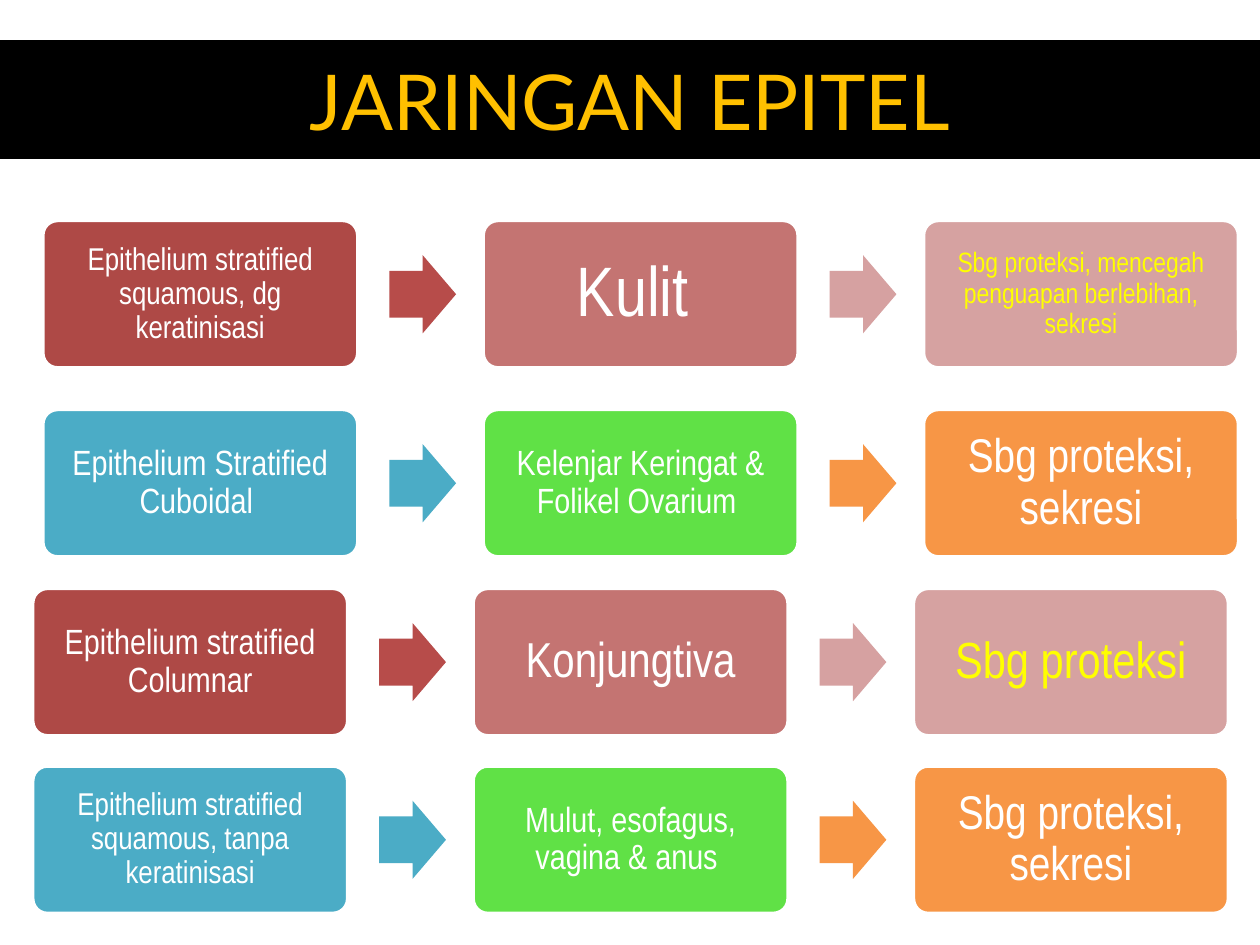
import pptx
import pptx.util
import pptx.dml.color
import pptx.enum.shapes
import pptx.enum.text

Inches = pptx.util.Inches
Pt = pptx.util.Pt
RGBColor = pptx.dml.color.RGBColor
MSO_SHAPE = pptx.enum.shapes.MSO_SHAPE

BLACK = RGBColor(0x00, 0x00, 0x00)
WHITE = RGBColor(0xFF, 0xFF, 0xFF)
GOLD = RGBColor(0xFF, 0xC0, 0x00)
YELLOW = RGBColor(0xFF, 0xFF, 0x00)
DARK_RED = RGBColor(0xAE, 0x49, 0x46)
RED = RGBColor(0xB7, 0x4C, 0x4A)
ROSE = RGBColor(0xC4, 0x74, 0x72)
PINK = RGBColor(0xD6, 0xA2, 0xA1)
PALE_PINK = RGBColor(0xD6, 0xA1, 0xA1)
TEAL = RGBColor(0x4B, 0xAC, 0xC6)
GREEN = RGBColor(0x60, 0xE1, 0x46)
ORANGE = RGBColor(0xF7, 0x96, 0x46)

BOX_W, BOX_H = 2.5, 1.17
ARROW_W, ARROW_H = 0.53, 0.62
STEP, ARROW_DX = 3.495, 2.75

RED_THEME = ((DARK_RED, ROSE, PINK), (RED, PALE_PINK), (WHITE, WHITE, YELLOW))
MIXED_THEME = ((TEAL, GREEN, ORANGE), (TEAL, ORANGE), (WHITE, WHITE, WHITE))

ROWS = [
    (0.34, 1.75, RED_THEME, [
        ("Epithelium stratified squamous, dg keratinisasi", 18),
        ("Kulit ", 40),
        ("Sbg proteksi, mencegah penguapan berlebihan, sekresi", 16)]),
    (0.34, 3.25, MIXED_THEME, [
        ("Epithelium Stratified Cuboidal ", 20),
        ("Kelenjar Keringat & Folikel Ovarium ", 20),
        ("Sbg proteksi, sekresi", 27)]),
    (0.26, 4.67, RED_THEME, [
        ("Epithelium stratified Columnar", 20),
        ("Konjungtiva", 28),
        ("Sbg proteksi", 29)]),
    (0.26, 6.08, MIXED_THEME, [
        ("Epithelium stratified squamous, tanpa keratinisasi", 18),
        ("Mulut, esofagus, vagina & anus ", 20),
        ("Sbg proteksi, sekresi", 27)]),
]


def write_text(sp, text, size, name, color, margin, spacing):
    tf = sp.text_frame
    frame = {"word_wrap": True,
             "auto_size": pptx.enum.text.MSO_AUTO_SIZE.NONE,
             "vertical_anchor": pptx.enum.text.MSO_ANCHOR.MIDDLE}
    for side in ("left", "right", "top", "bottom"):
        frame["margin_" + side] = Inches(margin)
    for key, value in frame.items():
        setattr(tf, key, value)
    p = tf.paragraphs[0]
    p.alignment = pptx.enum.text.PP_ALIGN.CENTER
    p.line_spacing = spacing
    r = p.add_run()
    r.text = text
    for key, value in {"size": Pt(size), "name": name}.items():
        setattr(r.font, key, value)
    r.font.color.rgb = color


def add_block(s, kind, x, y, w, h, fill, adjustments):
    sp = s.shapes.add_shape(kind, Inches(x), Inches(y), Inches(w), Inches(h))
    sp.shadow.inherit = False
    sp.fill.solid()
    sp.fill.fore_color.rgb = fill
    sp.line.fill.background()
    for i, value in enumerate(adjustments):
        sp.adjustments[i] = value
    return sp


prs = pptx.Presentation()
prs.slide_width = Inches(10)
prs.slide_height = Inches(7.5)
s = prs.slides.add_slide(prs.slide_layouts[5])

title = s.shapes.title
place = {"left": 0, "top": 0.33, "width": 10, "height": 0.92}
for key, value in place.items():
    setattr(title, key, Inches(value))
title.fill.solid()
title.fill.fore_color.rgb = BLACK
title.line.color.rgb = BLACK
title.line.width = Pt(1.5)
write_text(title, "JARINGAN EPITEL", 44, "Lato", GOLD, 0.05, 1.0)

for left, top, (fills, arrow_fills, colors), cells in ROWS:
    for col, (text, size) in enumerate(cells):
        x = left + col * STEP
        sp = add_block(s, MSO_SHAPE.ROUNDED_RECTANGLE, x, top,
                       BOX_W, BOX_H, fills[col], [0.1])
        sp.line.color.rgb = WHITE
        sp.line.width = Pt(2)
        write_text(sp, text, size, "Arial Narrow", colors[col], size / 250, 0.9)
        if col < len(arrow_fills):
            add_block(s, MSO_SHAPE.RIGHT_ARROW, x + ARROW_DX,
                      top + (BOX_H - ARROW_H) / 2,
                      ARROW_W, ARROW_H, arrow_fills[col], [0.6, 0.5])

prs.save("out.pptx")
